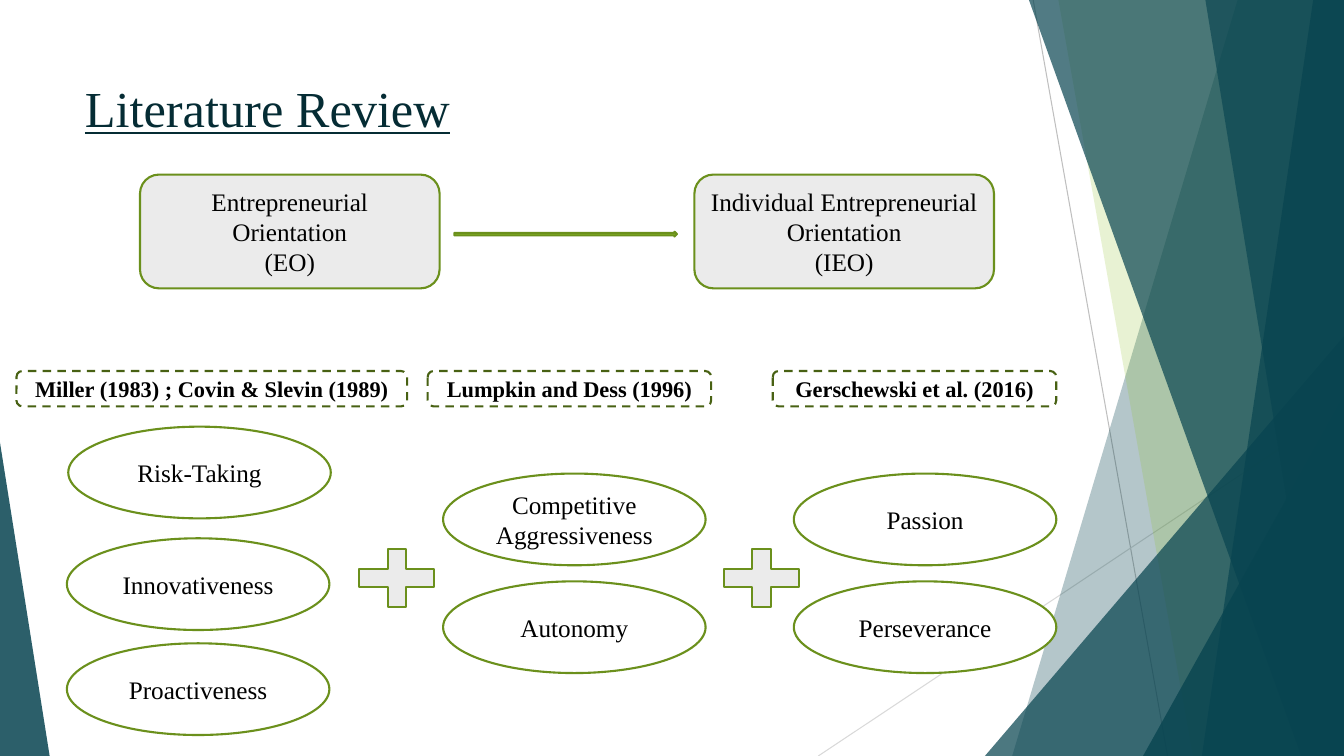
from lxml.etree import SubElement
from pptx import Presentation
from pptx.dml.color import RGBColor
from pptx.enum.dml import MSO_LINE
from pptx.enum.shapes import MSO_CONNECTOR, MSO_SHAPE
from pptx.enum.text import MSO_ANCHOR, MSO_AUTO_SIZE, PP_ALIGN
from pptx.oxml.ns import qn
from pptx.util import Pt

FONT = "Times New Roman"
TEAL, LIME, GREEN, OLIVE = "084450", "90C226", "6B901C", "486113"
GREY, WHITE, BLACK = "EBEBEB", "FFFFFF", "000000"


def paint(shape, fill, line=None, opacity=100):
    shape.shadow.inherit = False
    shape.fill.solid()
    shape.fill.fore_color.rgb = RGBColor.from_string(fill)
    if opacity < 100:
        color = shape.fill._xPr.find(qn("a:solidFill"))[0]
        SubElement(color, qn("a:alpha")).set("val", str(opacity * 1000))
    if line:
        shape.line.color.rgb = RGBColor.from_string(line)
        shape.line.width = Pt(1.5)
    else:
        shape.line.fill.background()


def add_box(kind, left, top, width, height, fill, line, lines=(), size=18, bold=False):
    box = page.shapes.add_shape(kind, Pt(left), Pt(top), Pt(width), Pt(height))
    paint(box, fill, line)
    frame = box.text_frame
    frame.word_wrap = True
    frame.vertical_anchor = MSO_ANCHOR.MIDDLE
    for index, text in enumerate(lines):
        para = frame.add_paragraph() if index else frame.paragraphs[0]
        para.text = text
        para.alignment = PP_ALIGN.CENTER
        para.font.name = FONT
        para.font.size = Pt(size)
        para.font.bold = bold
        para.font.color.rgb = RGBColor.from_string(BLACK)
    return box


deck = Presentation()
deck.slide_width, deck.slide_height = Pt(960), Pt(540)
page = deck.slides.add_slide(deck.slide_layouts[5])

# Thin background lines
for x1, y1, x2, y2, color in [(738, 0, 834, 540, "BFBFBF"), (960, 290, 584.5, 540, "D9D9D9")]:
    thread = page.shapes.add_connector(MSO_CONNECTOR.STRAIGHT, Pt(x1), Pt(y1), Pt(x2), Pt(y2))
    thread.line.color.rgb = RGBColor.from_string(color)
    thread.line.width = Pt(0.75)
    SubElement(thread._element.spPr, qn("a:effectLst"))

# Translucent facets, each a polygon
facets = [
    ([(884, 0), (960, 0), (960, 540), (723, 540)], TEAL, 30),
    ([(756, 0), (960, 0), (960, 540), (852, 540)], LIME, 20),
    ([(960, 240), (960, 540), (703.5, 540)], TEAL, 72),
    ([(735, 0), (960, 0), (960, 540), (929.5, 540)], TEAL, 70),
    ([(938, 0), (960, 0), (960, 540), (858.5, 540)], TEAL, 70),
    ([(861, 0), (960, 0), (960, 540), (949, 540)], TEAL, 65),
    ([(960, 283), (960, 540), (816.5, 540)], TEAL, 80),
    ([(0, 316), (35.5, 540), (0, 540)], TEAL, 85),
]
for corners, color, opacity in facets:
    points = [(Pt(x), Pt(y)) for x, y in corners]
    outline = page.shapes.build_freeform(*points[0])
    outline.add_line_segments(points[1:], close=True)
    paint(outline.convert_to_shape(), color, opacity=opacity)

# Title
title = page.shapes.title
title.left, title.top, title.width, title.height = Pt(53.5), Pt(48), Pt(677), Pt(65.5)
title.text_frame.text = "Literature Review"
title.text_frame.auto_size = MSO_AUTO_SIZE.NONE
title.text_frame.vertical_anchor = MSO_ANCHOR.TOP
title.text_frame.margin_top = Pt(7)
heading = title.text_frame.paragraphs[0]
heading.alignment = PP_ALIGN.LEFT
heading.font.name = FONT
heading.font.size = Pt(36)
heading.font.underline = True
heading.font.color.rgb = RGBColor.from_string("052C34")

# Concepts and the arrow between them
concepts = [
    (100, ["Entrepreneurial Orientation", "(EO)"]),
    (496, ["Individual Entrepreneurial Orientation", "(IEO)"]),
]
for left, lines in concepts:
    add_box(MSO_SHAPE.ROUNDED_RECTANGLE, left, 124.75, 214, 81.25, GREY, GREEN, lines)
add_box(MSO_SHAPE.RIGHT_ARROW, 324.5, 165.5, 159, 3.5, LIME, GREEN)

# Dimensions
dimensions = [
    (48.75, 304.75, "Risk-Taking"),
    (47.75, 384.5, "Innovativeness"),
    (47.75, 459.5, "Proactiveness"),
    (316.5, 338.25, "Competitive Aggressiveness"),
    (316.5, 415.25, "Autonomy"),
    (567, 338.25, "Passion"),
    (567, 415.25, "Perseverance"),
]
for left, top, name in dimensions:
    add_box(MSO_SHAPE.OVAL, left, top, 187.5, 65.5, WHITE, GREEN, [name])

# Plus signs between the columns
for left in (247, 507.5):
    add_box(MSO_SHAPE.MATH_PLUS, left, 385, 73, 56, GREY, GREEN)

# Dashed citations
citations = [
    (11.75, 279, "Miller (1983) ; Covin & Slevin (1989)"),
    (305.5, 202.5, "Lumpkin and Dess (1996)"),
    (552, 202.5, "Gerschewski et al. (2016)"),
]
for left, width, source in citations:
    citation = add_box(MSO_SHAPE.ROUNDED_RECTANGLE, left, 265, width, 25.25,
                       WHITE, OLIVE, [source], 16, True)
    citation.line.dash_style = MSO_LINE.DASH

deck.save("out.pptx")
